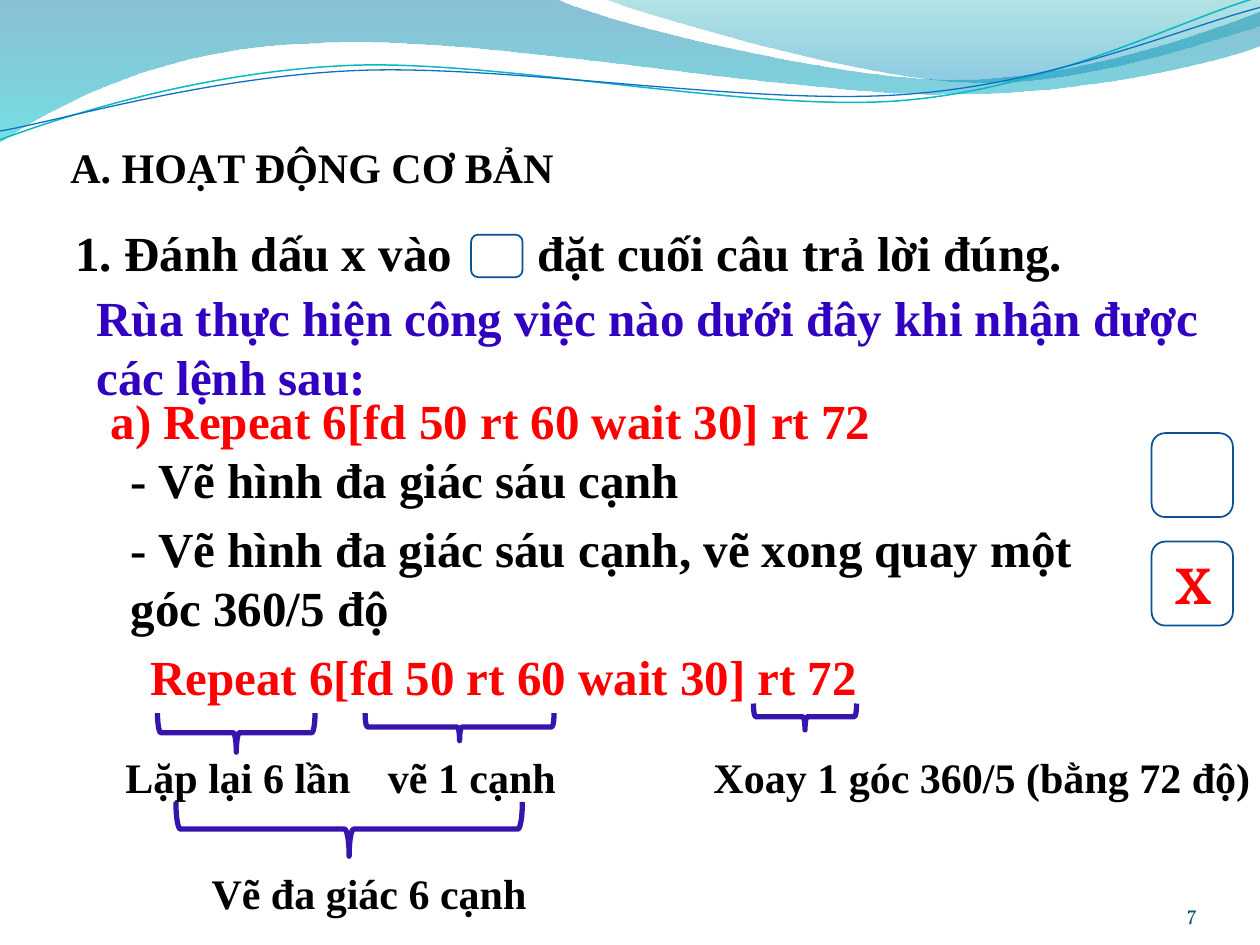
import math
from dataclasses import dataclass

from lxml import etree
from pptx import Presentation
from pptx.dml.color import RGBColor
from pptx.enum import shapes, text
from pptx.oxml import ns
from pptx.util import Pt


@dataclass(frozen=True)
class Theme:
    serif: str = "Times New Roman"
    accent_font: str = "Vollkorn"
    black: str = "000000"
    white: str = "FFFFFF"
    command: str = "FF0000"
    prompt: str = "3200C0"
    brace: str = "3515AB"
    checkbox: str = "0B5292"
    number: str = "045D75"
    body: int = 28
    note: int = 24
    mark: int = 44
    small: int = 12


THEME = Theme()
SLIDE_SIZE = (720, 540)
WAVE_TILT = -2.7

# Curves in points: a start, then segments of one end point or three Bezier points.
BANDS = [
    ([[(0, 0)], [(317.5, -0.7)],
      [(342.7, 12.2), (478, 45.4), (545.8, 45.4)],
      [(614, 45.4), (689.8, 18.7), (720, 6.5)], [(720.7, 25.9)],
      [(707.8, 31.7), (626.4, 54.7), (537.1, 54)],
      [(447.8, 54), (275, 20.2), (185, 24.5)],
      [(92.9, 25.9), (33.1, 59.8), (-0.7, 81.4)]],
     [("0074A1", 45), ("00C6CF", 55)]),
    ([[(344.9, -0.7)],
      [(366.5, 7.9), (491, 44.6), (553.7, 46.8)],
      [(616.3, 49.7), (691.9, 23), (720, 15.1)], [(720, 0)]],
     [("00A1A9", 30), ("008BBF", 45)]),
]
# Each wave also has the centre that it is tilted about.
WAVES = [
    ([[(0, 79.9)],
      [(34.6, 67), (113.8, 41), (199.4, 37.4)],
      [(284.4, 33.8), (427, 64.1), (513.4, 57.6)],
      [(599.8, 51.1), (675.4, 10.8), (718.6, -1.4)]], (359.3, 40.2), "0AB8BF", 0.85),
    ([[(0, 74.9)],
      [(33.8, 69.1), (118.1, 43.9), (203.8, 40.3)],
      [(290.2, 36.7), (429.8, 60.5), (516.2, 54)],
      [(601.9, 48.2), (677.5, 15.1), (720, 4.3)]], (359.6, 41.2), "0F6FC6", 0.75),
]


def rgb(code):
    return RGBColor.from_string(code)


def set_all(target, **values):
    for name, value in values.items():
        setattr(target, name, value)


def turn(curve, centre, degrees):
    cx, cy = centre
    cos, sin = math.cos(math.radians(degrees)), math.sin(math.radians(degrees))
    return [[(cx + (x - cx) * cos - (y - cy) * sin, cy + (x - cx) * sin + (y - cy) * cos)
             for x, y in segment] for segment in curve]


def add_outline(slide, curve, close):
    """Build the outline through its end points, then bend the Bezier segments."""
    curve = [[(Pt(x), Pt(y)) for x, y in segment] for segment in curve]
    ends = [segment[-1] for segment in curve]
    left, top = (min(values) for values in zip(*ends))
    builder = slide.shapes.build_freeform(*ends[0])
    builder.add_line_segments(ends[1:], close=close)
    outline = builder.convert_to_shape()
    outline.shadow.inherit = False
    for line, segment in zip(list(outline.element.iter(ns.qn("a:lnTo"))), curve[1:]):
        if len(segment) == 3:
            bend = etree.Element(ns.qn("a:cubicBezTo"))
            for x, y in segment:
                etree.SubElement(bend, ns.qn("a:pt"), x=str(x - left), y=str(y - top))
            line.getparent().replace(line, bend)
    return outline


def add_banner(slide):
    for curve, colours in BANDS:
        band = add_outline(slide, curve, True)
        band.line.fill.background()
        band.fill.gradient()
        band.fill.gradient_angle = 270
        for position, (stop, (code, _)) in enumerate(zip(band.fill.gradient_stops, colours)):
            stop.position = position
            stop.color.rgb = rgb(code)
        for colour, (_, opacity) in zip(band.element.iter(ns.qn("a:srgbClr")), colours):
            etree.SubElement(colour, ns.qn("a:alpha"), val=str(opacity * 1000))
    for curve, centre, code, width in WAVES:
        wave = add_outline(slide, turn(curve, centre, -WAVE_TILT), False)
        wave.rotation = WAVE_TILT
        wave.fill.background()
        wave.line.color.rgb = rgb(code)
        wave.line.width = Pt(width)


def add_text(slide, box, words, size=THEME.body, colour=THEME.black,
             font=THEME.serif, bold=True, align=None, **frame_format):
    frame = slide.shapes.add_textbox(*map(Pt, box)).text_frame
    set_all(frame, **{"word_wrap": True, **frame_format})
    paragraph = frame.paragraphs[0]
    paragraph.alignment = align
    run = paragraph.add_run()
    run.text = words
    set_all(run.font, size=Pt(size), name=font, bold=bold)
    run.font.color.rgb = rgb(colour)
    return paragraph


def add_tab_stop(paragraph, position):
    stops = etree.SubElement(paragraph._p.get_or_add_pPr(), ns.qn("a:tabLst"))
    etree.SubElement(stops, ns.qn("a:tab"), pos=str(Pt(position)), algn="l")


def add_checkbox(slide, box):
    checkbox = slide.shapes.add_shape(shapes.MSO_SHAPE.ROUNDED_RECTANGLE, *map(Pt, box))
    checkbox.shadow.inherit = False
    checkbox.fill.solid()
    checkbox.fill.fore_color.rgb = rgb(THEME.white)
    checkbox.line.color.rgb = rgb(THEME.checkbox)
    checkbox.line.width = Pt(1)


def add_brace_below(slide, box):
    """Fill the box with a brace that points down."""
    left, top, width, height = box
    shift = (width - height) / 2
    brace = slide.shapes.add_shape(shapes.MSO_SHAPE.RIGHT_BRACE, Pt(left + shift),
                                   Pt(top - shift), Pt(height), Pt(width))
    brace.rotation = 90
    brace.shadow.inherit = False
    brace.fill.background()
    brace.line.color.rgb = rgb(THEME.brace)
    brace.line.width = Pt(3)


def add_question(slide, left, top):
    add_text(slide, (left - 4.6, top - 46.4, 293.8, 36), "A. HOẠT ĐỘNG CƠ BẢN", THEME.note,
             align=text.PP_ALIGN.CENTER, word_wrap=False)
    instruction = add_text(slide, (left, top, 684, 41),
                           "1. Đánh dấu x vào\tđặt cuối câu trả lời đúng.")
    add_tab_stop(instruction, 264)
    add_checkbox(slide, (left + 233.2, top + 10.3, 29.4, 24.3))
    add_text(slide, (left + 12.1, top + 37.2, 671.8, 75),
             "Rùa thực hiện công việc nào dưới đây khi nhận được các lệnh sau:",
             colour=THEME.prompt)
    add_text(slide, (left + 20.2, top + 95.8, 691, 41),
             "a) Repeat 6[fd 50 rt 60 wait 30] rt 72", colour=THEME.command)


def add_answers(slide, left, top):
    add_text(slide, (left, top, 691, 41), "- Vẽ hình đa giác sáu cạnh")
    add_text(slide, (left, top + 39.3, 576, 75),
             "- Vẽ hình đa giác sáu cạnh, vẽ xong quay một góc 360/5 độ")
    for row in range(2):
        add_checkbox(slide, (left + 590.5, top - 5.9 + 62 * row, 46.5, 48))
    add_text(slide, (left + 595.9, top + 44.6, 23.8, 60.5), "x", THEME.mark, THEME.command,
             THEME.accent_font, bold=None)


def add_explanation(slide, left, top):
    add_text(slide, (left, top, 691, 41), "Repeat 6[fd 50 rt 60 wait 30] rt 72",
             colour=THEME.command)
    for x, y, width, height in [(11.2, 41.7, 90, 22.3), (129.8, 41.7, 108, 15.8),
                                (351.7, 36.2, 59, 15.1), (21.7, 92.5, 198, 31)]:
        add_brace_below(slide, (left + x, top + y, width, height))
    for x, y, width, words in [(-14.2, 60.2, 144.7, "Lặp lại 6 lần"),
                               (135.8, 60.2, 162.7, "vẽ 1 cạnh"),
                               (321.8, 60, 342, "Xoay 1 góc 360/5 (bằng 72 độ)"),
                               (35, 126.3, 234, "Vẽ đa giác 6 cạnh")]:
        add_text(slide, (left + x, top + y, width, 36), words, THEME.note)


def add_page_number(slide, box):
    margins = dict.fromkeys(("margin_left", "margin_top", "margin_right", "margin_bottom"), 0)
    add_text(slide, box, "7", THEME.small, THEME.number, THEME.accent_font, None,
             text.PP_ALIGN.RIGHT, vertical_anchor=text.MSO_ANCHOR.BOTTOM, **margins)


def main():
    deck = Presentation()
    deck.slide_width, deck.slide_height = map(Pt, SLIDE_SIZE)
    slide = deck.slides.add_slide(deck.slide_layouts[6])
    add_banner(slide)
    add_question(slide, 36, 123.8)
    add_answers(slide, 67.6, 253.4)
    add_explanation(slide, 78.8, 365.8)
    add_page_number(slide, (624, 500.4, 60, 28.8))
    deck.save("out.pptx")


if __name__ == "__main__":
    main()
